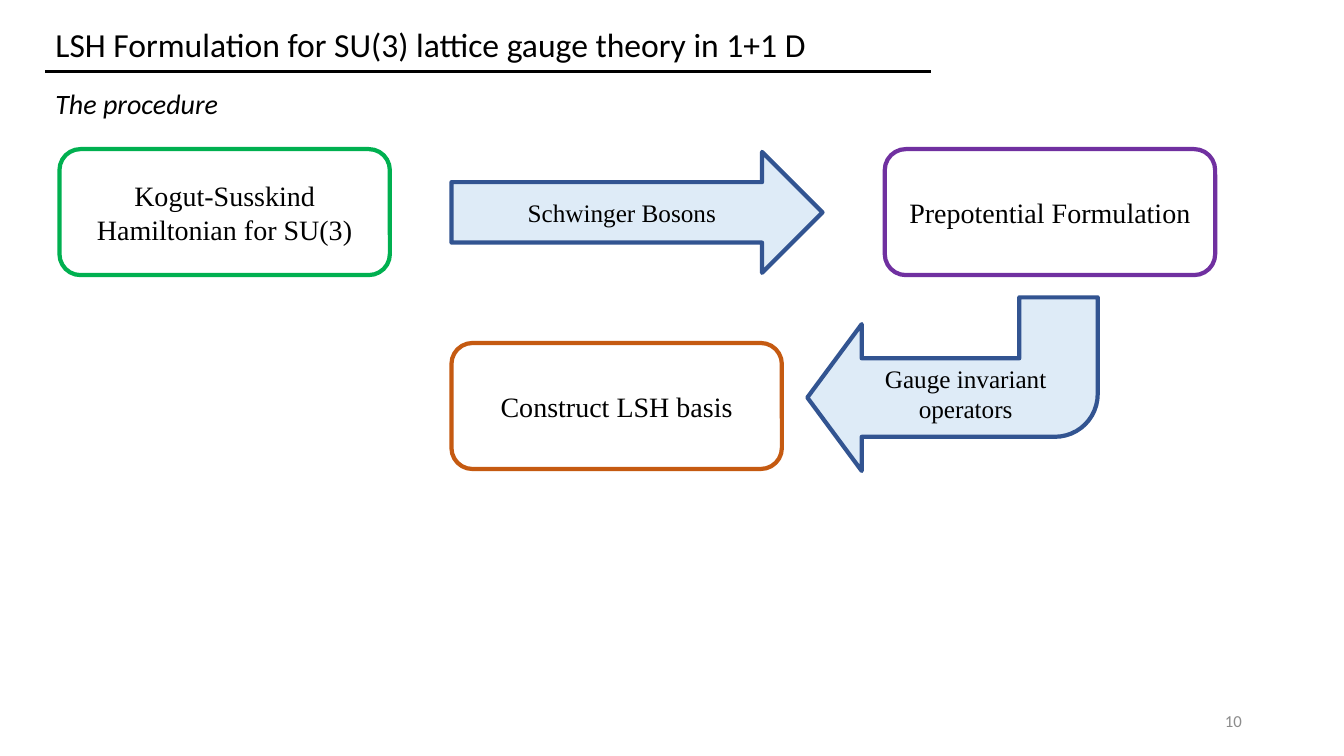
"""Build the slide on the procedure of the LSH formulation for SU(3)."""
from dataclasses import dataclass

from lxml import etree
from pptx import Presentation
from pptx.dml.color import RGBColor
from pptx.enum.shapes import MSO_CONNECTOR, MSO_SHAPE
from pptx.enum.text import MSO_ANCHOR, PP_ALIGN
from pptx.oxml.ns import qn
from pptx.slide import Slide
from pptx.text.text import TextFrame
from pptx.util import Pt

ROUNDED = MSO_SHAPE.ROUNDED_RECTANGLE
RIGHT_ARROW = MSO_SHAPE.RIGHT_ARROW
BENT_ARROW = MSO_SHAPE.BENT_ARROW
STRAIGHT = MSO_CONNECTOR.STRAIGHT
MIDDLE, TOP = MSO_ANCHOR.MIDDLE, MSO_ANCHOR.TOP
LEFT, CENTER, RIGHT = PP_ALIGN.LEFT, PP_ALIGN.CENTER, PP_ALIGN.RIGHT


@dataclass(frozen=True)
class Theme:
    """Colours, fonts and sizes of the slide."""

    sans: str = "Calibri"
    serif: str = "Times New Roman"
    black: str = "000000"
    white: str = "FFFFFF"
    grey: str = "8C8C8C"
    green: str = "00B050"
    purple: str = "7030A0"
    orange: str = "C55A11"
    arrow_fill: str = "DEEBF7"
    arrow_line: str = "325491"
    title: float = 24
    body: float = 20
    label: float = 18
    number: float = 12
    outline: float = 3
    rule: float = 2.25


@dataclass(frozen=True)
class Box:
    """A position and size in points."""

    left: float
    top: float
    width: float
    height: float

    def lengths(self) -> tuple[Pt, Pt, Pt, Pt]:
        """Return the four lengths for a shape."""
        return Pt(self.left), Pt(self.top), Pt(self.width), Pt(self.height)


@dataclass(frozen=True)
class Style:
    """The look of a text."""

    font: str
    size: float
    color: str = "000000"
    align: PP_ALIGN = CENTER
    anchor: MSO_ANCHOR = MIDDLE
    italic: bool = False


@dataclass(frozen=True)
class Step:
    """A stage or arrow of the procedure."""

    kind: MSO_SHAPE
    box: Box
    fill: str
    line: str
    text: str = ""
    size: float = 20
    rotation: float = 0
    adjustments: tuple[float, ...] = ()


@dataclass(frozen=True)
class Label:
    """A free-standing text."""

    box: Box
    text: str
    style: Style


THEME = Theme()
STAGE_W, STAGE_H = 236, 90
ROW_1, ROW_2 = 106.5, 245
COL_1, COL_2, COL_3 = 42.5, 322.5, 632
MARGIN = 32.4


def stage(left: float, top: float, line: str, text: str) -> Step:
    """Describe a rounded stage box."""
    box = Box(left, top, STAGE_W, STAGE_H)
    return Step(ROUNDED, box, THEME.white, line, text, THEME.body)


STEPS = (
    stage(COL_1, ROW_1, THEME.green, "Kogut-Susskind Hamiltonian for SU(3)"),
    Step(RIGHT_ARROW, Box(COL_2, 108.5, 265, 86.4), THEME.arrow_fill,
         THEME.arrow_line, "Schwinger Bosons", THEME.label),
    stage(COL_3, ROW_1, THEME.purple, "Prepotential Formulation"),
    stage(COL_2, ROW_2, THEME.orange, "Construct LSH basis"),
    Step(BENT_ARROW, Box(576.7, 212.4, 207.4, 124), THEME.arrow_fill,
         THEME.arrow_line, rotation=180,
         adjustments=(0.452, 0.423, 0.313, 0.246)),
)

LABELS = (
    Label(Box(MARGIN, 58.3, 599, 27.4), "The procedure",
          Style(THEME.sans, THEME.body, align=LEFT, anchor=TOP, italic=True)),
    Label(Box(614.2, 255.6, 151.2, 51), "Gauge invariant operators",
          Style(THEME.serif, THEME.label, anchor=TOP)),
    Label(Box(678.2, 500.4, 216, 28.8), "10",
          Style(THEME.sans, THEME.number, THEME.grey, RIGHT)),
)


def rgb(color: str) -> RGBColor:
    """Convert a hex colour."""
    return RGBColor.from_string(color)


def write(tf: TextFrame, text: str, style: Style) -> None:
    """Put a styled paragraph into a text frame."""
    tf.word_wrap = True
    tf.vertical_anchor = style.anchor
    p = tf.paragraphs[0]
    p.text = text
    p.alignment = style.align
    p.font.name = style.font
    p.font.size = Pt(style.size)
    p.font.italic = style.italic
    p.font.color.rgb = rgb(style.color)


def add_title(s: Slide) -> None:
    """Format the title and draw the rule under it."""
    title = s.shapes.title
    title.left, title.top, title.width, title.height = Box(
        MARGIN, 15.8, 620.6, 35.3).lengths()
    write(title.text_frame,
          "LSH Formulation for SU(3) lattice gauge theory in 1+1 D",
          Style(THEME.sans, THEME.title, align=LEFT))
    title.text_frame.paragraphs[0].line_spacing = 0.9
    rule = s.shapes.add_connector(
        STRAIGHT, Pt(MARGIN), Pt(51.1), Pt(665.3), Pt(51.1))
    rule.line.color.rgb = rgb(THEME.black)
    rule.line.width = Pt(THEME.rule)
    etree.SubElement(rule._element.spPr, qn("a:effectLst"))


def add_step(s: Slide, step: Step) -> None:
    """Draw a stage or arrow."""
    sp = s.shapes.add_shape(step.kind, *step.box.lengths())
    sp.shadow.inherit = False
    sp.rotation = step.rotation
    for i, value in enumerate(step.adjustments):
        sp.adjustments[i] = value
    sp.fill.solid()
    sp.fill.fore_color.rgb = rgb(step.fill)
    sp.line.color.rgb = rgb(step.line)
    sp.line.width = Pt(THEME.outline)
    if step.text:
        write(sp.text_frame, step.text, Style(THEME.serif, step.size))


def add_label(s: Slide, label: Label) -> None:
    """Draw a free-standing text."""
    sp = s.shapes.add_textbox(*label.box.lengths())
    write(sp.text_frame, label.text, label.style)


def main() -> None:
    """Build and save the slide."""
    prs = Presentation()
    prs.slide_width, prs.slide_height = Pt(960), Pt(540)
    s = prs.slides.add_slide(prs.slide_layouts.get_by_name("Title Only"))
    add_title(s)
    for step in STEPS:
        add_step(s, step)
    for label in LABELS:
        add_label(s, label)
    prs.save("out.pptx")


if __name__ == "__main__":
    main()
